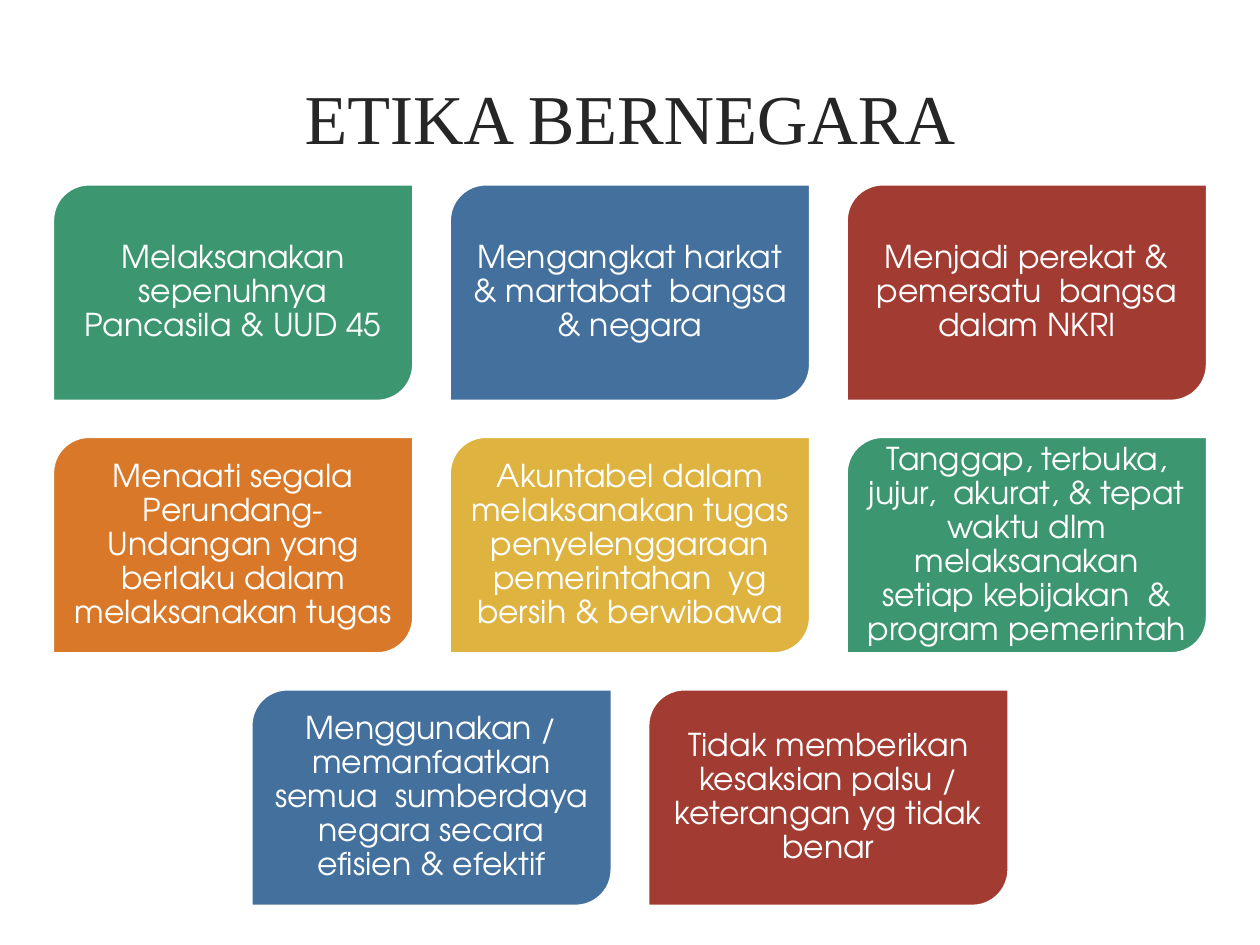
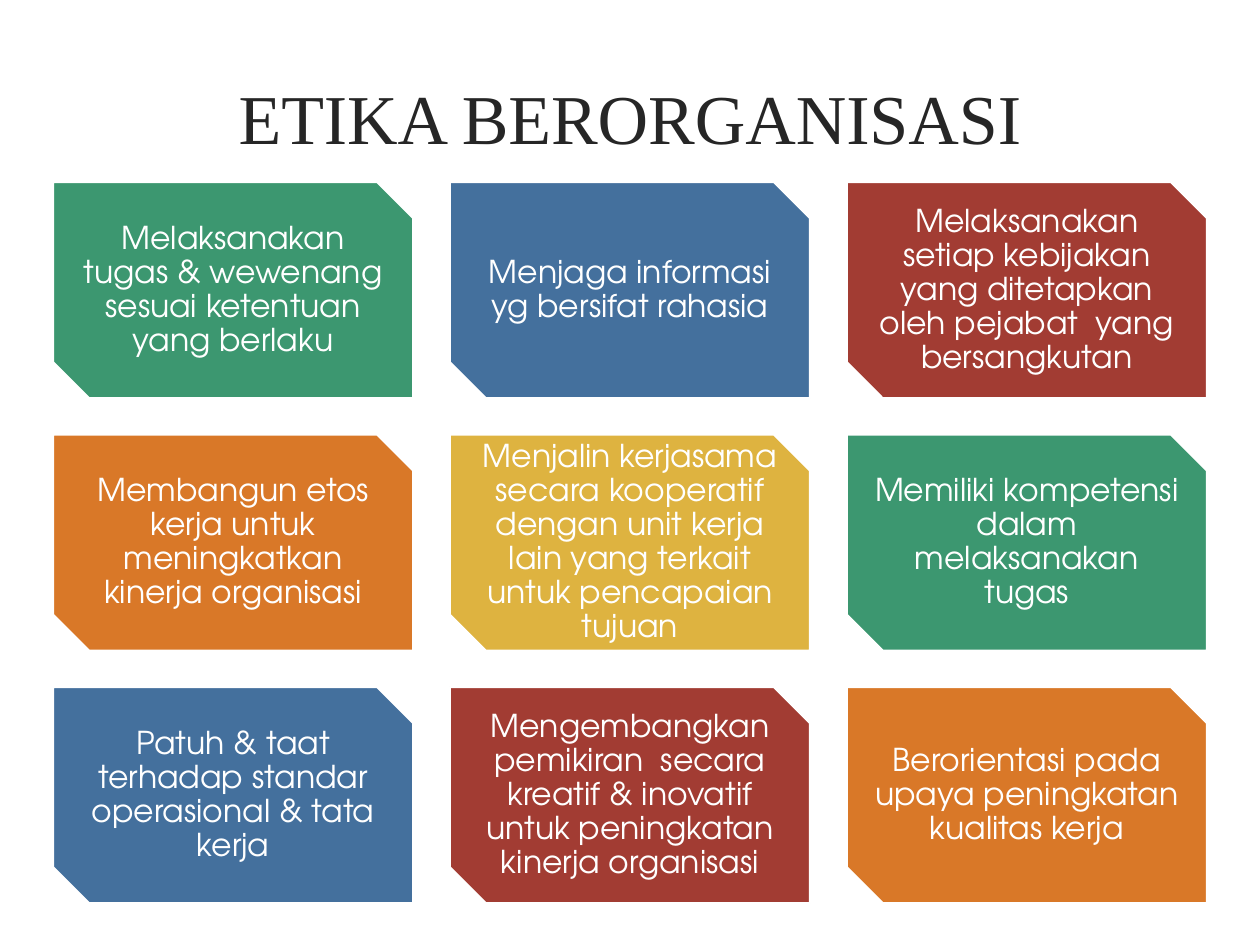
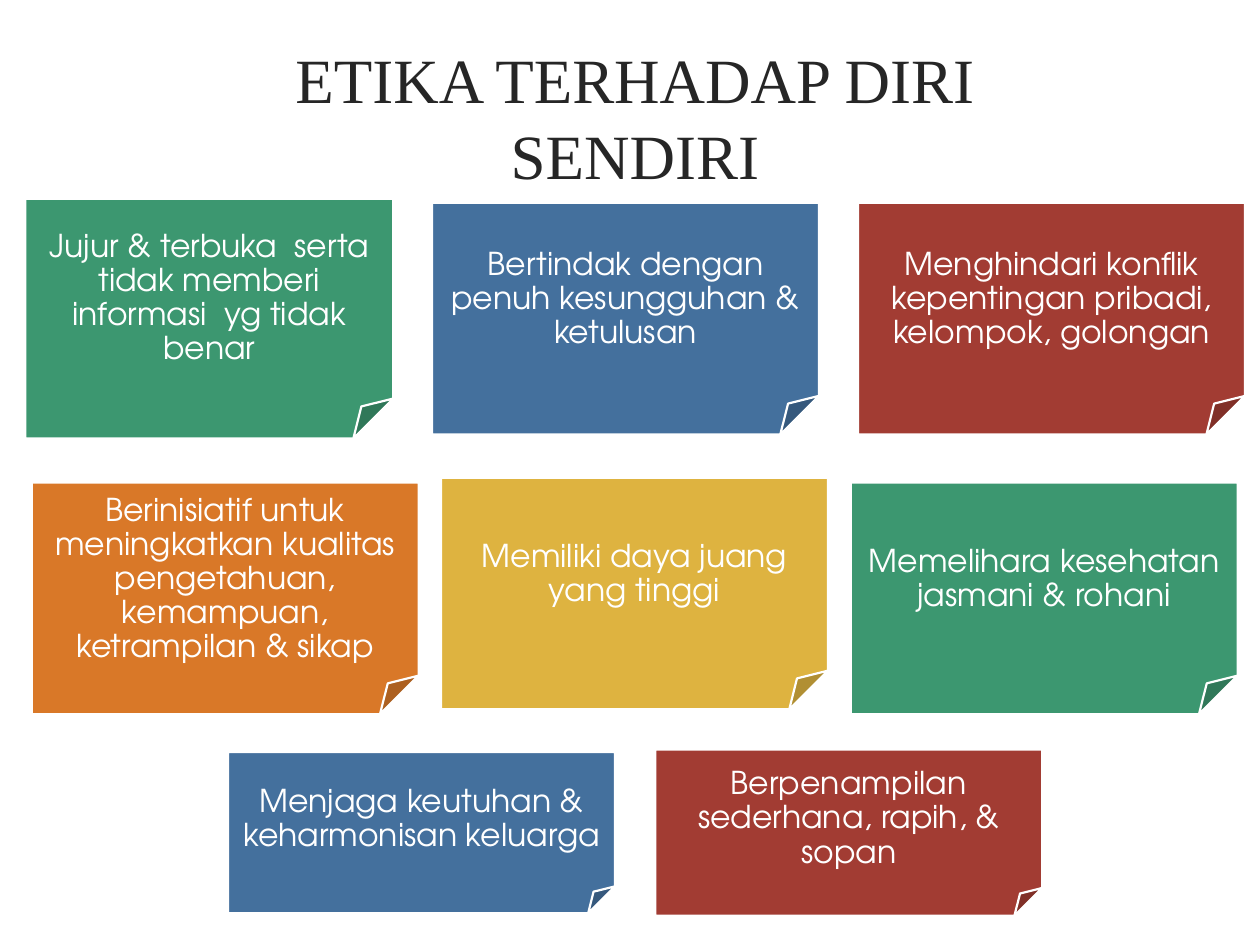
from dataclasses import dataclass
from itertools import cycle

from pptx import Presentation
from pptx.dml.color import RGBColor
from pptx.enum.shapes import MSO_SHAPE
from pptx.enum.text import MSO_ANCHOR, PP_ALIGN
from pptx.util import Cm, Pt

ROUND = MSO_SHAPE.ROUND_2_DIAG_RECTANGLE
SNIP = MSO_SHAPE.SNIP_2_DIAG_RECTANGLE
FOLD = MSO_SHAPE.FOLDED_CORNER
MIDDLE = MSO_ANCHOR.MIDDLE
CENTER = PP_ALIGN.CENTER


@dataclass(frozen=True)
class Theme:
    # green, blue, red, orange, yellow
    fills: tuple = ("3C9770", "44709D", "A23C33", "D97828", "DEB340")
    ink: str = "262626"
    white: str = "FFFFFF"
    head: str = "Times New Roman"
    body: str = "TeX Gyre Adventor"
    size: int = 18
    edge: float = 1.25


THEME = Theme()

# Content
STATE = [
    "Melaksanakan sepenuhnya Pancasila & UUD 45",
    "Mengangkat harkat & martabat  bangsa & negara",
    "Menjadi perekat & pemersatu  bangsa dalam NKRI",
    "Menaati segala Perundang-Undangan yang berlaku dalam melaksanakan tugas",
    "Akuntabel dalam melaksanakan tugas penyelenggaraan pemerintahan  yg "
    "bersih & berwibawa",
    "Tanggap, terbuka, jujur,  akurat, & tepat waktu dlm melaksanakan "
    "setiap kebijakan  & program pemerintah",
    "Menggunakan / memanfaatkan semua  sumberdaya negara secara "
    "efisien & efektif",
    "Tidak memberikan kesaksian palsu / keterangan yg tidak benar",
]
OFFICE = [
    "Melaksanakan tugas & wewenang sesuai ketentuan yang berlaku",
    "Menjaga informasi yg bersifat rahasia",
    "Melaksanakan setiap kebijakan yang ditetapkan oleh pejabat  yang "
    "bersangkutan",
    "Membangun etos kerja untuk meningkatkan kinerja organisasi",
    "Menjalin kerjasama secara kooperatif dengan unit kerja lain yang "
    "terkait untuk pencapaian tujuan",
    "Memiliki kompetensi dalam melaksanakan tugas",
    "Patuh & taat terhadap standar operasional & tata kerja",
    "Mengembangkan pemikiran  secara kreatif & inovatif untuk "
    "peningkatan kinerja organisasi",
    "Berorientasi pada upaya peningkatan kualitas kerja",
]
SELF = [
    "Jujur & terbuka  serta tidak memberi informasi  yg tidak benar",
    "Bertindak dengan penuh kesungguhan & ketulusan",
    "Menghindari konflik kepentingan pribadi, kelompok, golongan",
    "Berinisiatif untuk meningkatkan kualitas pengetahuan, kemampuan, "
    "ketrampilan & sikap",
    "Memiliki daya juang yang tinggi",
    "Memelihara kesehatan jasmani & rohani",
    "Menjaga keutuhan & keharmonisan keluarga",
    "Berpenampilan sederhana, rapih, & sopan",
]

# Lengths in cm
WIDE, HIGH = 25.4, 19.05
CARD_W, CARD_H = 7.26, 4.36
STEP_X, STEP_Y = 8.0, 5.09
COLS = 3
PAD = 0.18

# Loosely placed notes: left, top, width, height
NOTES = [
    (0.51, 4.01, 7.42, 4.83),
    (8.71, 4.09, 7.8, 4.67),
    (17.3, 4.09, 7.8, 4.67),
    (0.64, 9.73, 7.8, 4.67),
    (8.89, 9.63, 7.8, 4.67),
    (17.15, 9.73, 7.8, 4.67),
    (4.6, 15.16, 7.8, 3.25),
    (13.21, 15.11, 7.8, 3.35),
]


def grid(count, top):
    """Rows of three cards, each row centred on the slide."""
    spots = []
    for i in range(count):
        row, col = divmod(i, COLS)
        in_row = min(COLS, count - row * COLS)
        left = (WIDE - (in_row - 1) * STEP_X - CARD_W) / 2
        spots.append((left + col * STEP_X, top + row * STEP_Y, CARD_W, CARD_H))
    return spots


# Title, title size, title left, card shape, texts, spots
PAGES = [
    ("ETIKA BERNEGARA", 40, 3.25, ROUND, STATE, grid(len(STATE), 3.72)),
    ("ETIKA BERORGANISASI", 40, 3.25, SNIP, OFFICE, grid(len(OFFICE), 3.67)),
    ("ETIKA TERHADAP DIRI SENDIRI", 36, 3.35, FOLD, SELF, NOTES),
]


def write(frame, text, face, size, color):
    """Put one centred run in a text frame."""
    frame.word_wrap = True
    frame.vertical_anchor = MIDDLE
    para = frame.paragraphs[0]
    para.alignment = CENTER
    run = para.add_run()
    run.text = text
    run.font.name = face
    run.font.size = Pt(size)
    run.font.color.rgb = RGBColor.from_string(color)
    return para


def add_title(slide, text, size, left):
    box = slide.shapes.add_textbox(Cm(left), Cm(0.53), Cm(18.9), Cm(3.63))
    write(box.text_frame, text, THEME.head, size, THEME.ink)


def add_card(slide, kind, spot, fill, text):
    card = slide.shapes.add_shape(kind, *map(Cm, spot))
    card.shadow.inherit = False
    card.fill.solid()
    card.fill.fore_color.rgb = RGBColor.from_string(fill)
    card.line.color.rgb = RGBColor.from_string(THEME.white)
    card.line.width = Pt(THEME.edge)
    frame = card.text_frame
    frame.margin_left = frame.margin_right = Cm(PAD)
    frame.margin_top = frame.margin_bottom = Cm(PAD)
    para = write(frame, text, THEME.body, THEME.size, THEME.white)
    para.line_spacing = 0.9


def main():
    deck = Presentation()
    deck.slide_width, deck.slide_height = Cm(WIDE), Cm(HIGH)
    blank = deck.slide_layouts[6]
    for title, size, left, kind, texts, spots in PAGES:
        slide = deck.slides.add_slide(blank)
        add_title(slide, title, size, left)
        for text, spot, fill in zip(texts, spots, cycle(THEME.fills)):
            add_card(slide, kind, spot, fill, text)
    deck.save("out.pptx")


if __name__ == "__main__":
    main()
